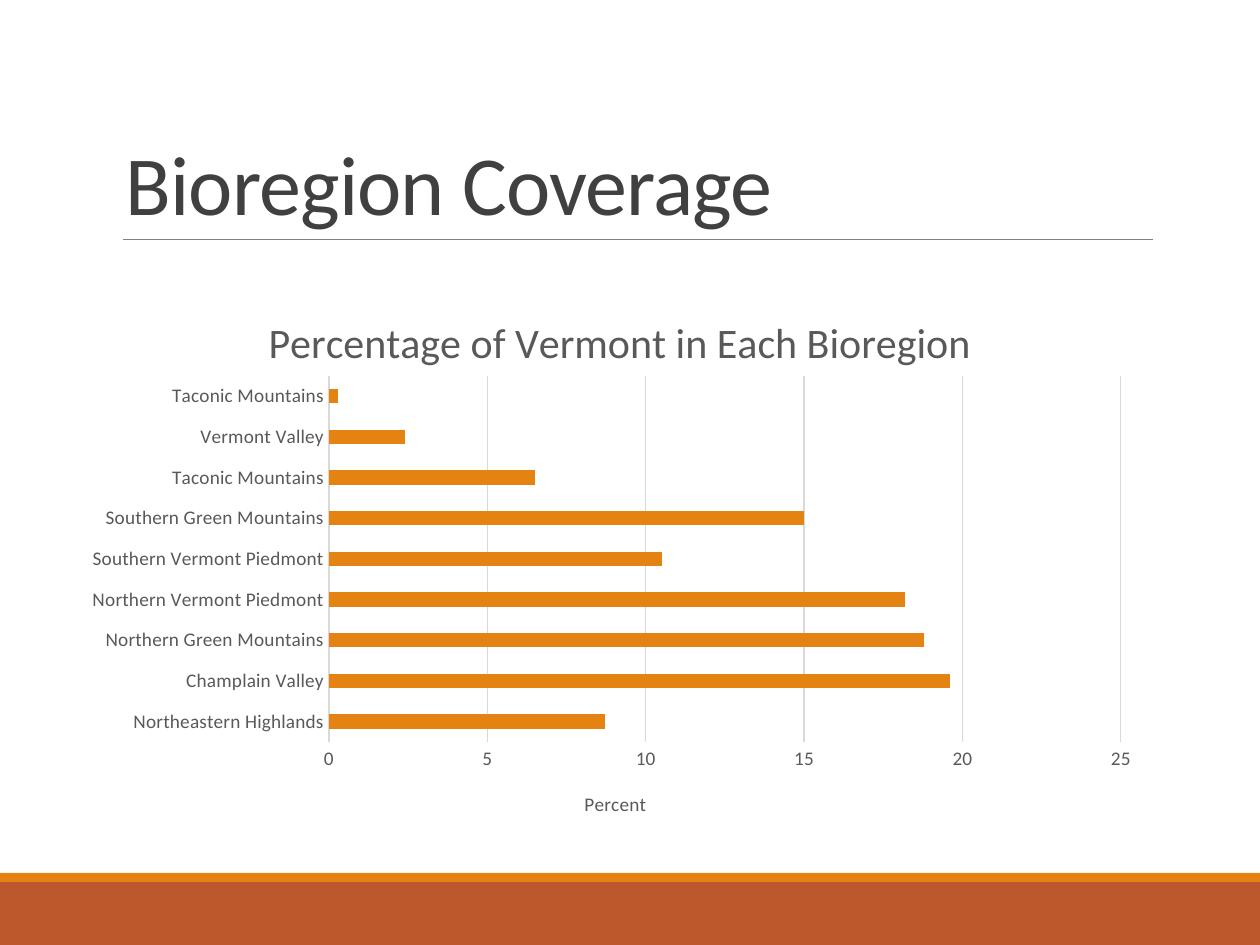
from lxml import etree
from pptx import Presentation
from pptx import util as u
from pptx.chart.data import CategoryChartData
from pptx.dml.color import RGBColor
from pptx.enum import chart as ch, shapes, text
from pptx.oxml.ns import qn

PX = 914400 // 126
FONT = "Calibri"
COLORS = {"rust": "BD582C", "orange": "E48312", "rule": "808080",
          "title": "404040", "label": "595959", "grid": "D9D9D9"}
TITLE = "Bioregion Coverage"
CHART_TITLE = "Percentage of Vermont in Each Bioregion"
AXIS_TITLE = "Percent"
COVERAGE = [
    ("Northeastern Highlands", 8.7),
    ("Champlain Valley", 19.6),
    ("Northern Green Mountains", 18.8),
    ("Northern Vermont Piedmont", 18.2),
    ("Southern Vermont Piedmont", 10.5),
    ("Southern Green Mountains", 15),
    ("Taconic Mountains", 6.5),
    ("Vermont Valley", 2.4),
    ("Taconic Mountains", 0.3),
]
BANDS = [("rust", (0, 882, 1260, 63)), ("orange", (0, 873, 1260, 9))]
TITLE_BOX = (113, 39, 1040, 200)
RULE = (123, 239, 1153, 239)
CHART_BOX = (71, 283, 1082, 555)
PLOT_BOX = (329, 376, 792, 366)
CHART_TITLE_AT = (261, 307)
AXIS_TITLE_AT = (581, 787)


def emu(box):
    return [v * PX for v in box]


def rgb(name):
    return RGBColor.from_string(COLORS[name])


def style(font, size, color):
    font.name, font.size, font.bold = FONT, u.Pt(size), False
    font.color.rgb = rgb(color)


def line(fmt, color, width):
    fmt.color.rgb = rgb(color)
    fmt.width = u.Pt(width)


def place(parent, index, box, inner=False):
    for old in parent.findall(qn("c:layout")):
        parent.remove(old)
    layout = etree.Element(qn("c:layout"))
    manual = etree.SubElement(layout, qn("c:manualLayout"))
    left, top, width, height = CHART_BOX
    values = [("xMode", "edge"), ("yMode", "edge"),
              ("x", (box[0] - left) / width), ("y", (box[1] - top) / height)]
    if inner:
        values.insert(0, ("layoutTarget", "inner"))
        values += [("w", box[2] / width), ("h", box[3] / height)]
    for tag, value in values:
        etree.SubElement(manual, qn("c:" + tag)).set("val", str(value))
    parent.insert(index, layout)


def label(title, words, size, at):
    r = title.text_frame.paragraphs[0].add_run()
    r.text = words
    style(r.font, size, "label")
    place(title._element, 1, at)


prs = Presentation()
prs.slide_width, prs.slide_height = u.Inches(10), u.Inches(7.5)
s = prs.slides.add_slide(prs.slide_layouts[5])

for color, box in BANDS:
    sp = s.shapes.add_shape(shapes.MSO_SHAPE.RECTANGLE, *emu(box))
    sp.shadow.inherit = False
    sp.fill.solid()
    sp.fill.fore_color.rgb = rgb(color)
    sp.line.fill.background()

rule = s.shapes.add_connector(shapes.MSO_CONNECTOR.STRAIGHT, *emu(RULE))
line(rule.line, "rule", 0.5)
etree.SubElement(rule._element.spPr, qn("a:effectLst"))

title = s.shapes.title
title.left, title.top, title.width, title.height = emu(TITLE_BOX)
tf = title.text_frame
tf.word_wrap = True
tf.auto_size = text.MSO_AUTO_SIZE.NONE
tf.vertical_anchor = text.MSO_ANCHOR.BOTTOM
p = tf.paragraphs[0]
p.alignment = text.PP_ALIGN.LEFT
p.line_spacing = 0.85
r = p.add_run()
r.text = TITLE
style(r.font, 48, "title")
r._r.get_or_add_rPr().set("spc", "-50")

data = CategoryChartData()
data.categories = [name for name, _ in COVERAGE]
data.add_series("Series 1", [value for _, value in COVERAGE])
chart = s.shapes.add_chart(ch.XL_CHART_TYPE.BAR_CLUSTERED, *emu(CHART_BOX), data).chart
style(chart.font, 11, "label")
chart.has_legend = False
chart.has_title = True
label(chart.chart_title, CHART_TITLE, 24, CHART_TITLE_AT)

plot = chart.plots[0]
plot.gap_width = 182
plot.vary_by_categories = False
fill = plot.series[0].format.fill
fill.solid()
fill.fore_color.rgb = rgb("orange")

cats, vals = chart.category_axis, chart.value_axis
for axis in (cats, vals):
    axis.major_tick_mark = axis.minor_tick_mark = ch.XL_TICK_MARK.NONE
    style(axis.tick_labels.font, 11, "label")
cats.has_major_gridlines = False
line(cats.format.line, "grid", 0.75)
vals.minimum_scale, vals.maximum_scale, vals.major_unit = 0, 25, 5
vals.format.line.fill.background()
vals.has_major_gridlines = True
line(vals.major_gridlines.format.line, "grid", 0.75)
vals.has_title = True
label(vals.axis_title, AXIS_TITLE, 11, AXIS_TITLE_AT)
place(chart._chartSpace.xpath("c:chart/c:plotArea")[0], 0, PLOT_BOX, inner=True)

prs.save("out.pptx")
